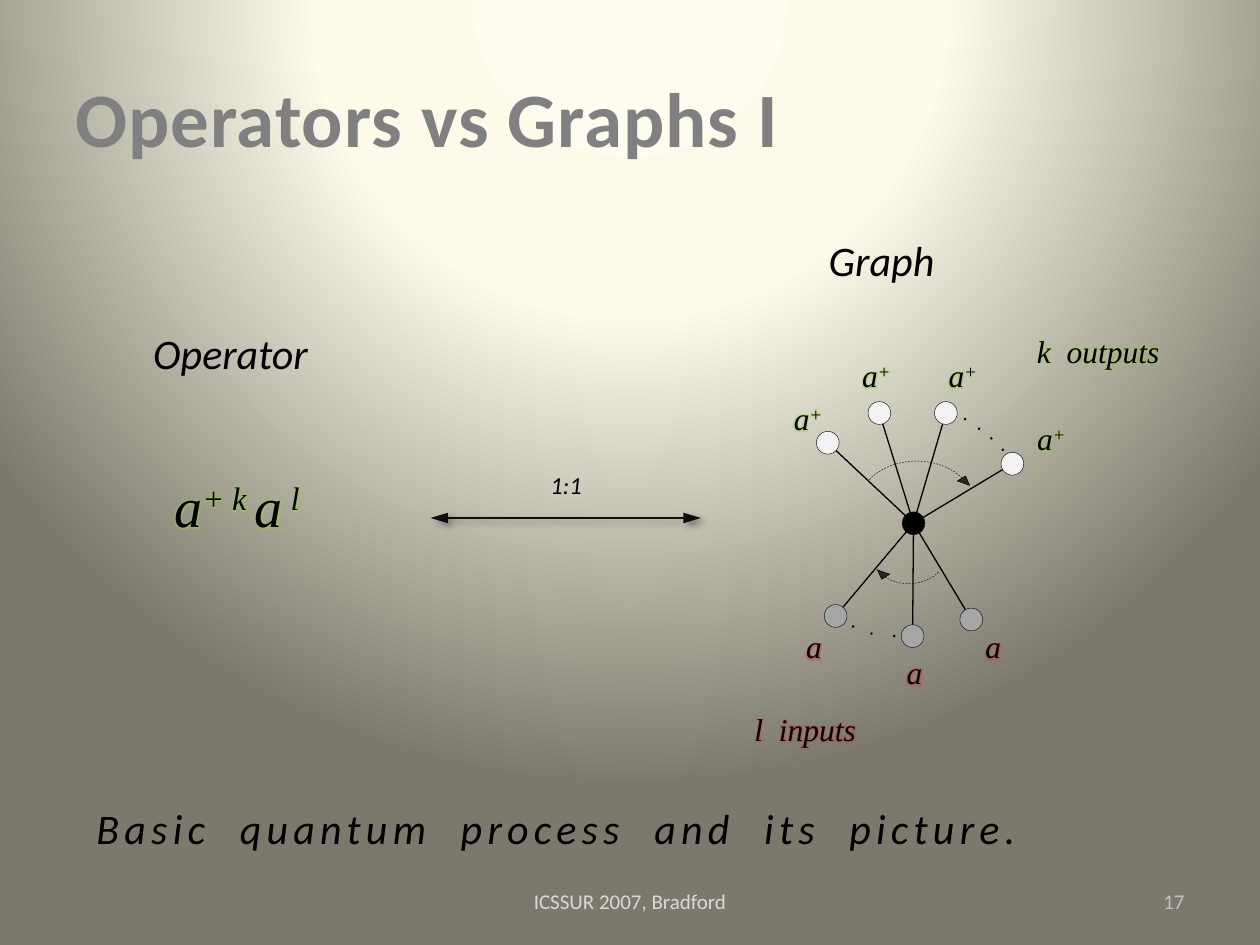
"""Build the slide that pairs an operator with its graph."""
from pptx import Presentation
from pptx.dml.color import RGBColor
from pptx.enum.dml import MSO_LINE
from pptx.enum.shapes import MSO_CONNECTOR, MSO_SHAPE
from pptx.enum.text import MSO_ANCHOR, PP_ALIGN
from pptx.oxml import parse_xml
from pptx.util import Pt

NS = 'xmlns:a="http://schemas.openxmlformats.org/drawingml/2006/main"'
HEX = {"title": "808080", "black": "000000", "ink": "0D0D0D", "arrow": "262626",
       "out": "F2F2F2", "in": "A6A6A6", "foot": "D9D9D9", "page": "BFBFBF",
       "green": "9BD23C", "red": "E0393E",
       "cream": "FEFCEE", "pale": "FDFAEA", "olive": "7B796B"}
SANS, SERIF = "Calibri", "Times New Roman"


def write(box, runs, size, font=SANS, ink="black", glow=None, gap=0,
          italic=True, bold=False, align=PP_ALIGN.LEFT, wrap=True, mid=True):
    frame = box.text_frame
    frame.word_wrap = wrap
    frame.vertical_anchor = MSO_ANCHOR.MIDDLE if mid else MSO_ANCHOR.TOP
    para = frame.paragraphs[0]
    para.alignment = align
    for text, base in runs:
        run = para.add_run()
        run.text = text
        run.font.size, run.font.name = Pt(size), font
        run.font.italic, run.font.bold = italic, bold
        run.font.color.rgb = RGBColor.from_string(HEX[ink])
        props = run.font._element
        if base:
            props.set("baseline", str(base * 1000))
        if gap:
            props.set("spc", str(int(gap * 100)))
        if glow:
            props.insert(1, parse_xml(
                f'<a:effectLst {NS}><a:glow rad="{Pt(4)}"><a:srgbClr val="{HEX[glow]}">'
                '<a:alpha val="45000"/></a:srgbClr></a:glow></a:effectLst>'))


def draw(kind, left, top, wide, high, fill=None, line=None, turn=0, adj=()):
    shape = shapes.add_shape(kind, Pt(left), Pt(top), Pt(wide), Pt(high))
    shape.shadow.inherit = False
    shape.rotation = turn
    for i, value in enumerate(adj):
        shape.adjustments[i] = value
    if fill:
        shape.fill.solid()
        shape.fill.fore_color.rgb = RGBColor.from_string(HEX[fill])
    else:
        shape.fill.background()
    if line:
        shape.line.width = Pt(0.25)
        shape.line.color.rgb = RGBColor.from_string(HEX[line])
    else:
        shape.line.fill.background()
    return shape


deck = Presentation()
deck.slide_width, deck.slide_height = Pt(720), Pt(540)
slide = deck.slides.add_slide(deck.slide_layouts[5])
shapes = slide.shapes

back = slide.background.fill
back.gradient()
stops = "".join(f'<a:gs pos="{pos}000"><a:srgbClr val="{HEX[name]}"/></a:gs>'
                for pos, name in ((0, "cream"), (40, "pale"), (100, "olive")))
grad = slide.background._cSld.bg.bgPr[0]
grad.getparent().replace(grad, parse_xml(
    f'<a:gradFill {NS} rotWithShape="1"><a:gsLst>{stops}</a:gsLst><a:path path="circle">'
    '<a:fillToRect l="50000" t="-80000" r="50000" b="180000"/></a:path></a:gradFill>'))

title = shapes.title
title.left, title.top, title.width, title.height = Pt(36), Pt(21.6), Pt(648), Pt(90)
write(title, [("Operators vs Graphs I", 0)], 44, ink="title", gap=0.5,
      italic=False, bold=True)

link = shapes.add_connector(MSO_CONNECTOR.STRAIGHT, Pt(246), Pt(296), Pt(400.5), Pt(296))
link.line.width = Pt(1)
link.line.color.rgb = RGBColor.from_string(HEX["ink"])
for end in ("headEnd", "tailEnd"):
    link.line._get_or_add_ln().append(
        parse_xml(f'<a:{end} {NS} type="triangle" w="med" len="lg"/>'))
link._element.spPr.append(parse_xml(
    f'<a:effectLst {NS}><a:outerShdw blurRad="{Pt(4)}" dist="{Pt(3)}" dir="2700000">'
    '<a:srgbClr val="000000"><a:alpha val="40000"/></a:srgbClr></a:outerShdw></a:effectLst>'))

hub = (522, 299)
nodes = [(473, 253, "out"), (502.5, 236, "out"), (540.5, 236, "out"), (578.5, 265, "out"),
         (477.5, 352, "in"), (521.5, 363.5, "in"), (555, 354, "in")]
for x, y, kind in nodes:
    edge = shapes.add_connector(MSO_CONNECTOR.STRAIGHT, Pt(hub[0]), Pt(hub[1]), Pt(x), Pt(y))
    edge.line.width = Pt(0.75)
    edge.line.color.rgb = RGBColor.from_string(HEX["black"])
    edge._element.spPr.append(parse_xml(f"<a:effectLst {NS}/>"))
for x, y, kind in [(*hub, "black")] + nodes:
    draw(MSO_SHAPE.OVAL, x - 6.5, y - 6.5, 13, 13, kind, "ink")

for turn, arc, end, tip in ((0, (491, 263.5, 65.5, 49), 204.37, (496, 265)),
                            (180, (498.5, 302.5, 41.5, 31), 202.98, (492, 282.5))):
    curve = draw(MSO_SHAPE.ARC, *arc, line="ink", turn=turn, adj=(124.35, end))
    curve.line.dash_style = MSO_LINE.DASH
    draw(MSO_SHAPE.CIRCULAR_ARROW, *tip, 67.5, 55.5, "arrow", "black", turn,
         (0, 7.41, 189.28, 189.05, 0.05))

for x, y in ((551.5, 239.5), (559.5, 245), (566.5, 250.5), (573, 257),
             (487.5, 358), (498, 362), (511, 363.5)):
    draw(MSO_SHAPE.OVAL, x - 0.7, y - 0.7, 1.4, 1.4, "ink")

make, drop = [("a", 0), ("+", 30)], [("a", 0)]
marks = [(446.5, 224.5, 31.5, make, "green"), (485.5, 200, 31.5, make, "green"),
         (535, 200, 31.5, make, "green"), (585.5, 236, 31.5, make, "green"),
         (453.5, 355, 23.5, drop, "red"), (511, 369.5, 23.5, drop, "red"),
         (556, 355, 23.5, drop, "red"),
         (585.5, 186, 116.5, [("k  outputs", 0)], "green"),
         (424, 402, 103.5, [("l  inputs", 0)], "red")]
for x, y, wide, runs, glow in marks:
    box = shapes.add_textbox(Pt(x), Pt(y), Pt(wide), Pt(29))
    write(box, runs, 18, SERIF, glow=glow, wrap=False, mid=False)

power = [("a", 0), ("+ k ", 30), ("a", 0), (" l", 30)]
texts = [
    ((92.5, 264, 115, 49), power, dict(size=32, font=SERIF, glow="green")),
    ((307.5, 265, 36, 24.5), [("1:1", 0)], dict(size=14, wrap=False, mid=False)),
    ((80.5, 177, 165.5, 49), [("Operator", 0)], dict(size=24)),
    ((466.5, 124, 127.5, 49), [("Graph", 0)], dict(size=24)),
    ((48, 445.5, 568, 55), [("Basic  quantum  process  and  its  picture.", 0)],
     dict(size=24, gap=3)),
    ((246, 500.5, 228, 29), [("ICSSUR 2007, Bradford", 0)],
     dict(size=12, ink="foot", italic=False, align=PP_ALIGN.CENTER)),
    ((516, 500.5, 168, 29), [("17", 0)],
     dict(size=12, ink="page", italic=False, align=PP_ALIGN.RIGHT))]
for area, runs, style in texts:
    write(shapes.add_textbox(*map(Pt, area)), runs, **style)

deck.save("out.pptx")
